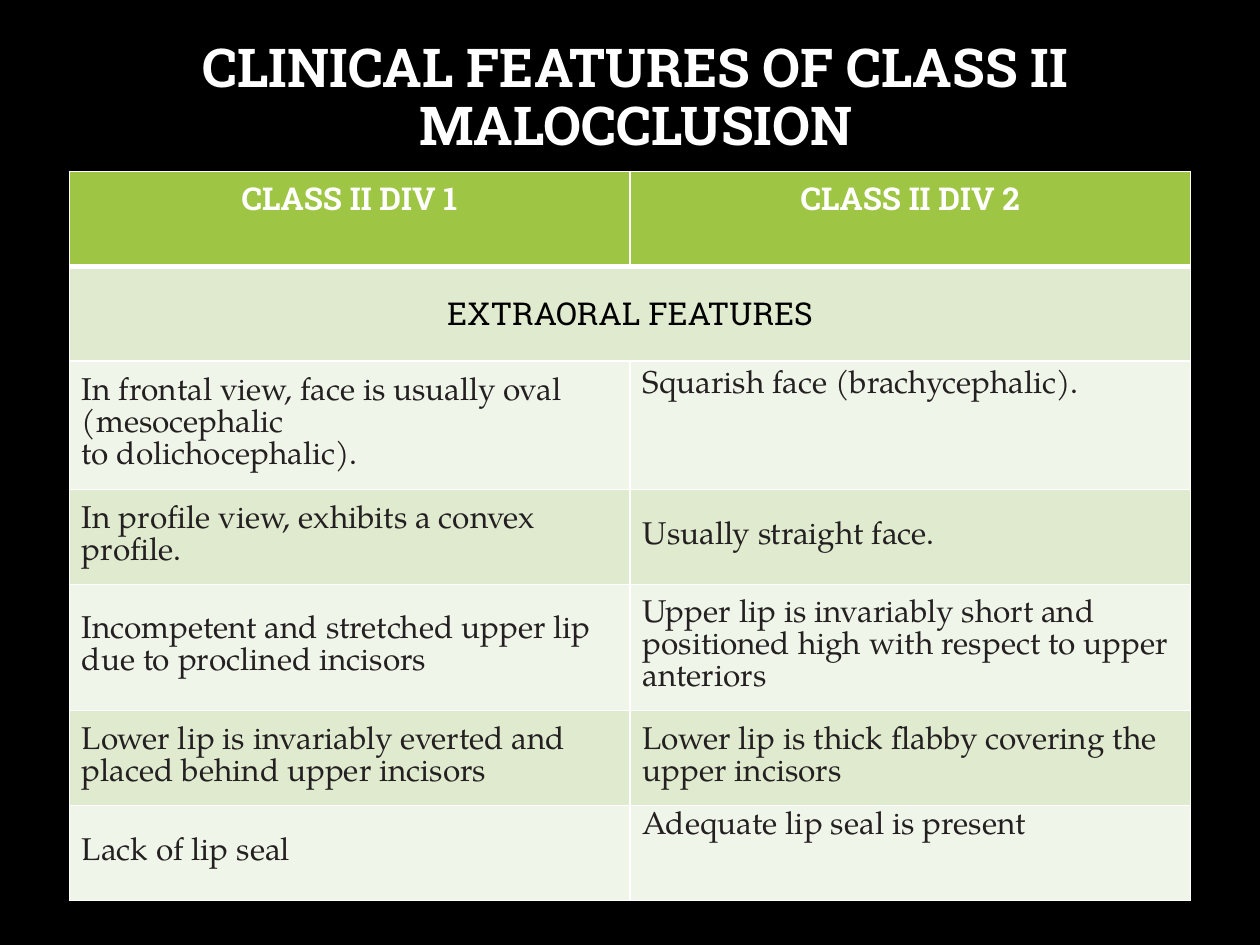
from lxml.etree import SubElement
from pptx import Presentation
from pptx.dml.color import RGBColor
from pptx.enum.text import MSO_ANCHOR, PP_ALIGN
from pptx.oxml.ns import qn
from pptx.util import Pt

BLACK = RGBColor(0, 0, 0)
WHITE = RGBColor(255, 255, 255)
INK = RGBColor(0x24, 0x20, 0x21)
GREEN = RGBColor(0x9E, 0xC5, 0x44)
BANDS = [RGBColor(0xDF, 0xEA, 0xCF), RGBColor(0xF0, 0xF5, 0xE9)]
SLAB, SERIF = "Roboto Slab", "TeX Gyre Pagella"
TOP, MID = MSO_ANCHOR.TOP, MSO_ANCHOR.MIDDLE

HEADS = ["CLASS II DIV 1", "CLASS II DIV 2"]
ROWS = [
    ["In frontal view, face is usually oval (mesocephalic\nto dolichocephalic).",
     "Squarish face (brachycephalic)."],
    ["In profile view, exhibits a convex profile.",
     "Usually straight face."],
    ["Incompetent and stretched upper lip due to proclined incisors",
     "Upper lip is invariably short and positioned high with respect to upper anteriors"],
    ["Lower lip is invariably everted and placed behind upper incisors",
     "Lower lip is thick flabby covering the upper incisors"],
    ["Lack of lip seal",
     "Adequate lip seal is present"],
]
HIGH = [54.25, 54.25, 73.5] + [54.25] * 4


def write(frame, text, font, size, color, bold=False, align=PP_ALIGN.LEFT):
    para = frame.paragraphs[0]
    para.alignment = align
    for i, line in enumerate(text.split("\n")):
        if i:
            para.add_line_break()
        run = para.add_run()
        run.text = line
        run.font.name = font
        run.font.size = Pt(size)
        run.font.bold = bold
        run.font.color.rgb = color
    return para


def edge(cell, base):
    # Border lines must come before the fill in the cell properties
    props = cell._tc.get_or_add_tcPr()
    for side, width in (("L", 1), ("R", 1), ("T", 1), ("B", base)):
        line = SubElement(props, qn("a:ln" + side), w=str(Pt(width)))
        fill = SubElement(line, qn("a:solidFill"))
        SubElement(fill, qn("a:srgbClr"), val=str(WHITE))


def paint(cell, fill, anchor=MID, base=1):
    edge(cell, base)
    cell.fill.solid()
    cell.fill.fore_color.rgb = fill
    cell.vertical_anchor = anchor


def add_title(slide):
    box = slide.shapes.add_textbox(Pt(57.6), Pt(31), Pt(611.3), Pt(85))
    frame = box.text_frame
    frame.word_wrap = True
    frame.vertical_anchor = MID
    frame.margin_bottom = Pt(37)
    para = write(frame, "CLINICAL FEATURES OF CLASS II MALOCCLUSION",
                 SLAB, 30.6, WHITE, True, PP_ALIGN.CENTER)
    para.line_spacing = 0.9


def add_grid(slide):
    grid = slide.shapes.add_table(len(HIGH), 2, Pt(39.6), Pt(97.9),
                                  Pt(640.8), Pt(sum(HIGH))).table
    for row, high in zip(grid.rows, HIGH):
        row.height = Pt(high)

    # Header row
    for col, text in enumerate(HEADS):
        cell = grid.cell(0, col)
        paint(cell, GREEN, TOP, 3)
        write(cell.text_frame, text, SLAB, 18, WHITE, True, PP_ALIGN.CENTER)

    # Section row across both columns
    band = grid.cell(1, 0)
    band.merge(grid.cell(1, 1))
    for col in range(2):
        paint(grid.cell(1, col), BANDS[0])
    write(band.text_frame, "EXTRAORAL FEATURES", SLAB, 18, BLACK,
          align=PP_ALIGN.CENTER)

    # Feature rows with alternating bands
    for i, pair in enumerate(ROWS, 2):
        for col, text in enumerate(pair):
            cell = grid.cell(i, col)
            paint(cell, BANDS[(i + 1) % 2])
            write(cell.text_frame, text, SERIF, 18, INK)

    # Two cells on the right sit at the top
    for i in (2, 6):
        grid.cell(i, 1).vertical_anchor = TOP
    grid.cell(2, 1).margin_top = Pt(5.3)


def main():
    deck = Presentation()
    deck.slide_width, deck.slide_height = Pt(720), Pt(540)
    slide = deck.slides.add_slide(deck.slide_layouts[6])
    back = slide.background.fill
    back.solid()
    back.fore_color.rgb = BLACK
    add_title(slide)
    add_grid(slide)
    deck.save("out.pptx")


if __name__ == "__main__":
    main()
